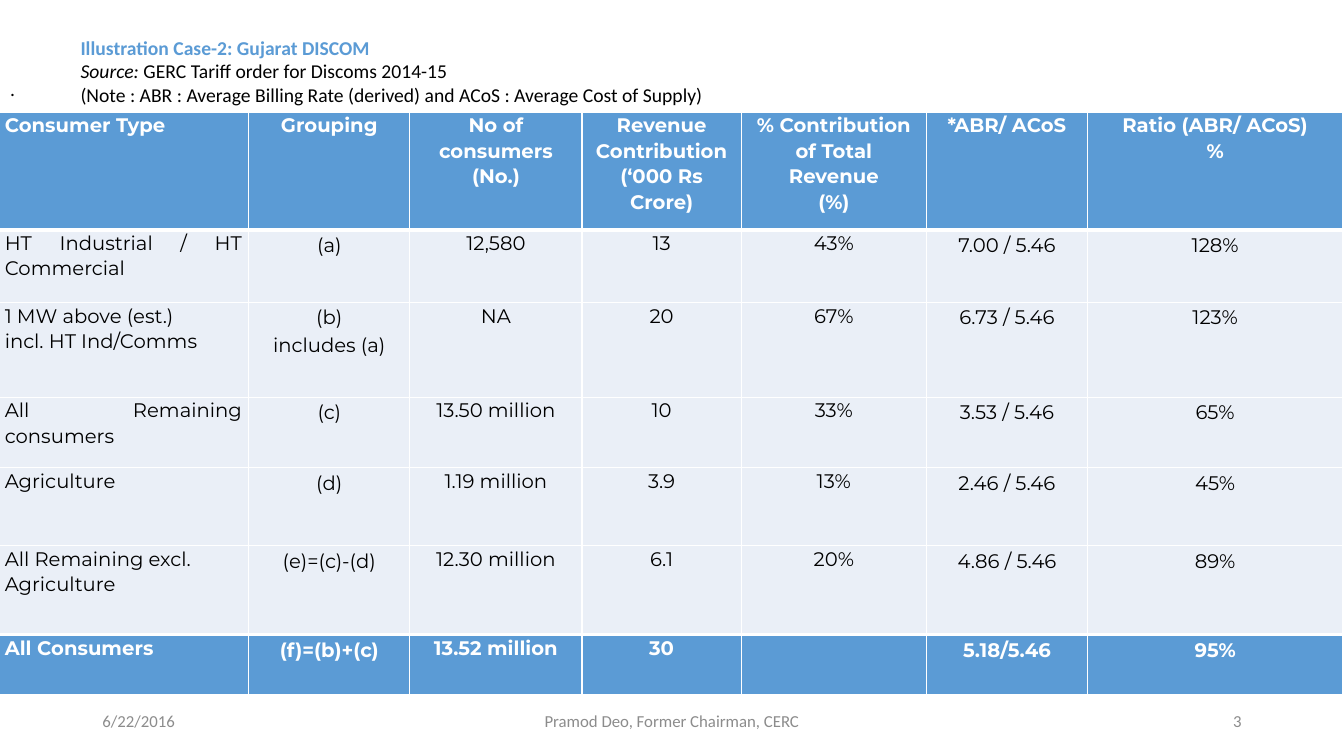
"""Build the Gujarat DISCOM tariff illustration slide."""
from lxml.etree import SubElement
from pptx import Presentation
from pptx.dml.color import RGBColor
from pptx.enum.text import MSO_ANCHOR, PP_ALIGN
from pptx.oxml.ns import qn
from pptx.util import Cm, Pt

BLUE, PALE, WHITE, BLACK, GREY = "5B9BD5", "EAEFF7", "FFFFFF", "000000", "8C8C8C"
ROWS = [
    ["Consumer Type", "Grouping", "No of consumers\n(No.)",
     "Revenue Contribution\n(‘000 Rs Crore)",
     "% Contribution of Total Revenue\n(%)", "*ABR/ ACoS", "Ratio (ABR/ ACoS)\n%"],
    ["HT Industrial / HT Commercial", "(a)", "12,580", "13", "43%", "7.00 / 5.46", "128%"],
    ["1 MW above (est.)\nincl. HT Ind/Comms", "(b)\nincludes (a)", "NA", "20", "67%",
     "6.73 / 5.46", "123%"],
    ["All Remaining consumers", "(c)", "13.50 million", "10", "33%", "3.53 / 5.46", "65%"],
    ["Agriculture", "(d)", "1.19 million", "3.9", "13%", "2.46 / 5.46", "45%"],
    ["All Remaining excl.\nAgriculture", "(e)=(c)-(d)", "12.30 million", "6.1", "20%",
     "4.86 / 5.46", "89%"],
    ["All Consumers", "(f)=(b)+(c)", "13.52 million", "30", "", "5.18/5.46", "95%"],
]
COL_WIDTHS = [6.32, 4.06, 4.34, 4.01, 4.67, 4.06, 6.43]
ROW_HEIGHTS = [2.97, 1.83, 2.39, 1.78, 1.96, 2.24, 1.52]
LOOSE_COLS = (1, 5, 6)
HEADING = [
    [("Illustration Case-2: Gujarat DISCOM", BLUE, True, False)],
    [("Source: ", BLACK, False, True),
     ("GERC Tariff order for Discoms 2014-15", BLACK, False, False)],
    [("(Note : ABR : Average Billing Rate (derived) and ACoS : Average Cost of Supply)",
      BLACK, False, False)],
]
FOOTERS = [
    ("6/22/2016", 2.33, 7.62, PP_ALIGN.LEFT),
    ("Pramod Deo, Former Chairman, CERC", 11.22, 11.43, PP_ALIGN.CENTER),
    ("3", 23.92, 7.62, PP_ALIGN.RIGHT),
]


def rgb(value):
    return RGBColor.from_string(value)


def set_font(font, size, color, name="Calibri", bold=False, italic=False):
    font.size, font.name, font.bold, font.italic = Pt(size), name, bold, italic
    font.color.rgb = rgb(color)


def add_box(slide, left, top, width, height):
    tf = slide.shapes.add_textbox(Cm(left), Cm(top), Cm(width), Cm(height)).text_frame
    tf.word_wrap = True
    tf.vertical_anchor = MSO_ANCHOR.MIDDLE
    return tf


def set_borders(cell, top, bottom):
    tc_pr = cell._tc.get_or_add_tcPr()
    for side, width in (("L", 1), ("R", 1), ("T", top), ("B", bottom)):
        line = SubElement(tc_pr, qn(f"a:ln{side}"), w=str(Pt(width)))
        SubElement(SubElement(line, qn("a:solidFill")), qn("a:srgbClr"), val=WHITE)


def format_cell(cell, text, row, col):
    last = len(ROWS) - 1
    strong = row in (0, last)
    cell.margin_left = cell.margin_right = Cm(0.17)
    cell.margin_top = cell.margin_bottom = 0
    set_borders(cell, 3 if row in (1, last) else 1, 3 if row in (0, last - 1) else 1)
    cell.fill.solid()
    cell.fill.fore_color.rgb = rgb(BLUE if strong else PALE)
    cell.text_frame.text = text
    for p in cell.text_frame.paragraphs:
        p.alignment = PP_ALIGN.CENTER if col else PP_ALIGN.JUSTIFY
        p.line_spacing = 1.15 if row and col in LOOSE_COLS else 1.07
        set_font(p.font, 14, WHITE if strong else BLACK, "Montserrat", strong)


def add_tariff_table(slide):
    frame = slide.shapes.add_table(len(ROWS), len(COL_WIDTHS), Cm(-0.05), Cm(2.82),
                                   Cm(sum(COL_WIDTHS)), Cm(sum(ROW_HEIGHTS)))
    table = frame.table
    for column, width in zip(table.columns, COL_WIDTHS):
        column.width = Cm(width)
    for row, (values, height) in enumerate(zip(ROWS, ROW_HEIGHTS)):
        table.rows[row].height = Cm(height)
        for col, text in enumerate(values):
            format_cell(table.cell(row, col), text, row, col)


def add_title(slide):
    title = slide.shapes.title
    title.left, title.top, title.width, title.height = 0, 0, Cm(33.87), Cm(4.55)
    tf = title.text_frame
    tf.text = "."
    tf.vertical_anchor = MSO_ANCHOR.MIDDLE
    p = tf.paragraphs[0]
    p.alignment, p.line_spacing = PP_ALIGN.LEFT, 0.9
    set_font(p.font, 14, BLACK)


def add_heading(slide):
    tf = add_box(slide, 1.78, 0.76, 31.57, 2.06)
    for i, runs in enumerate(HEADING):
        p = tf.add_paragraph() if i else tf.paragraphs[0]
        p.alignment = PP_ALIGN.JUSTIFY
        for text, color, bold, italic in runs:
            r = p.add_run()
            r.text = text
            set_font(r.font, 14, color, bold=bold, italic=italic)


def add_footers(slide):
    for text, left, width, alignment in FOOTERS:
        tf = add_box(slide, left, 17.65, width, 1.02)
        tf.text = text
        p = tf.paragraphs[0]
        p.alignment = alignment
        set_font(p.font, 12, GREY)


def main():
    prs = Presentation()
    prs.slide_width, prs.slide_height = Cm(33.87), Cm(19.05)
    s = prs.slides.add_slide(prs.slide_layouts[5])
    add_title(s)
    add_tariff_table(s)
    add_heading(s)
    add_footers(s)
    prs.save("out.pptx")


if __name__ == "__main__":
    main()
